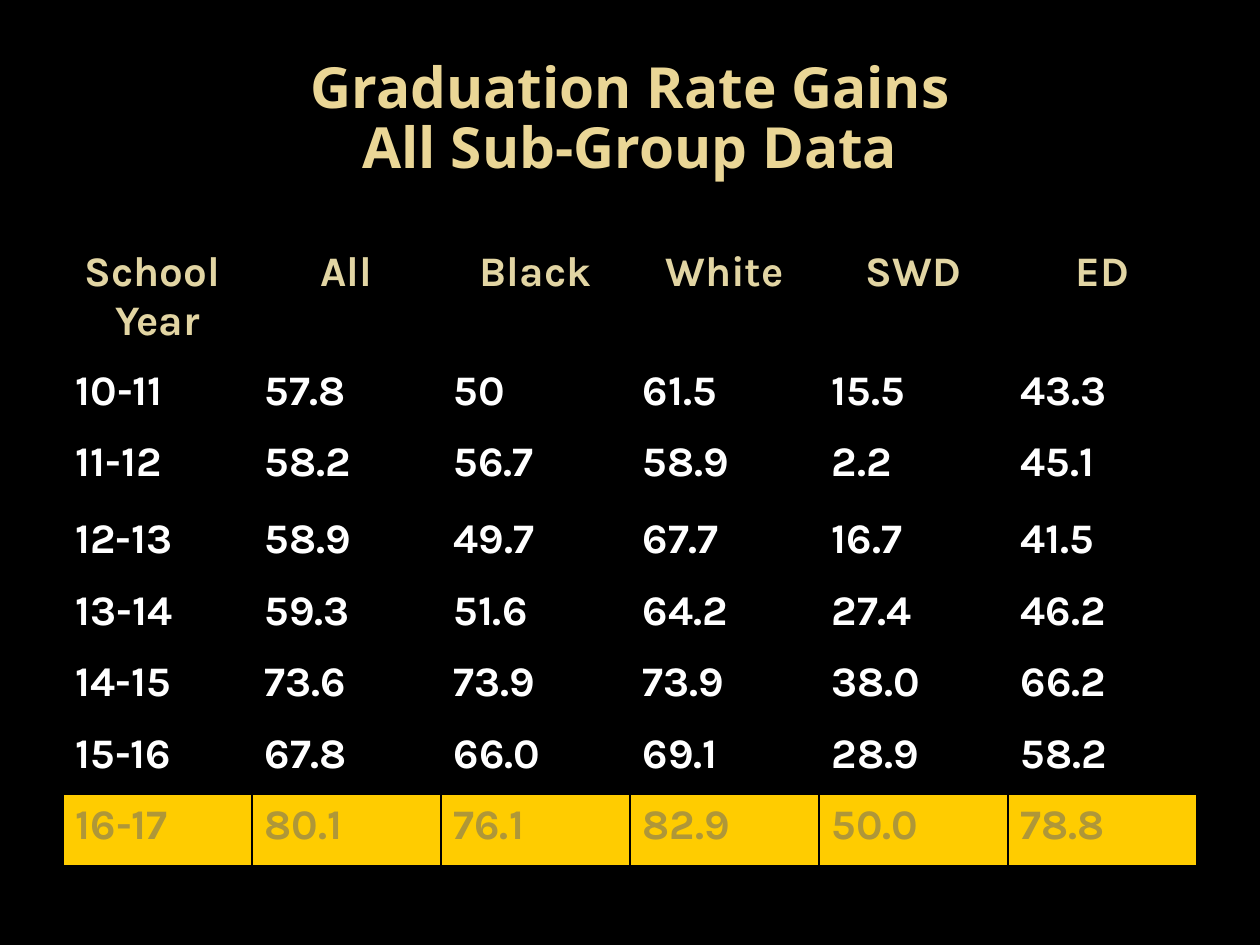
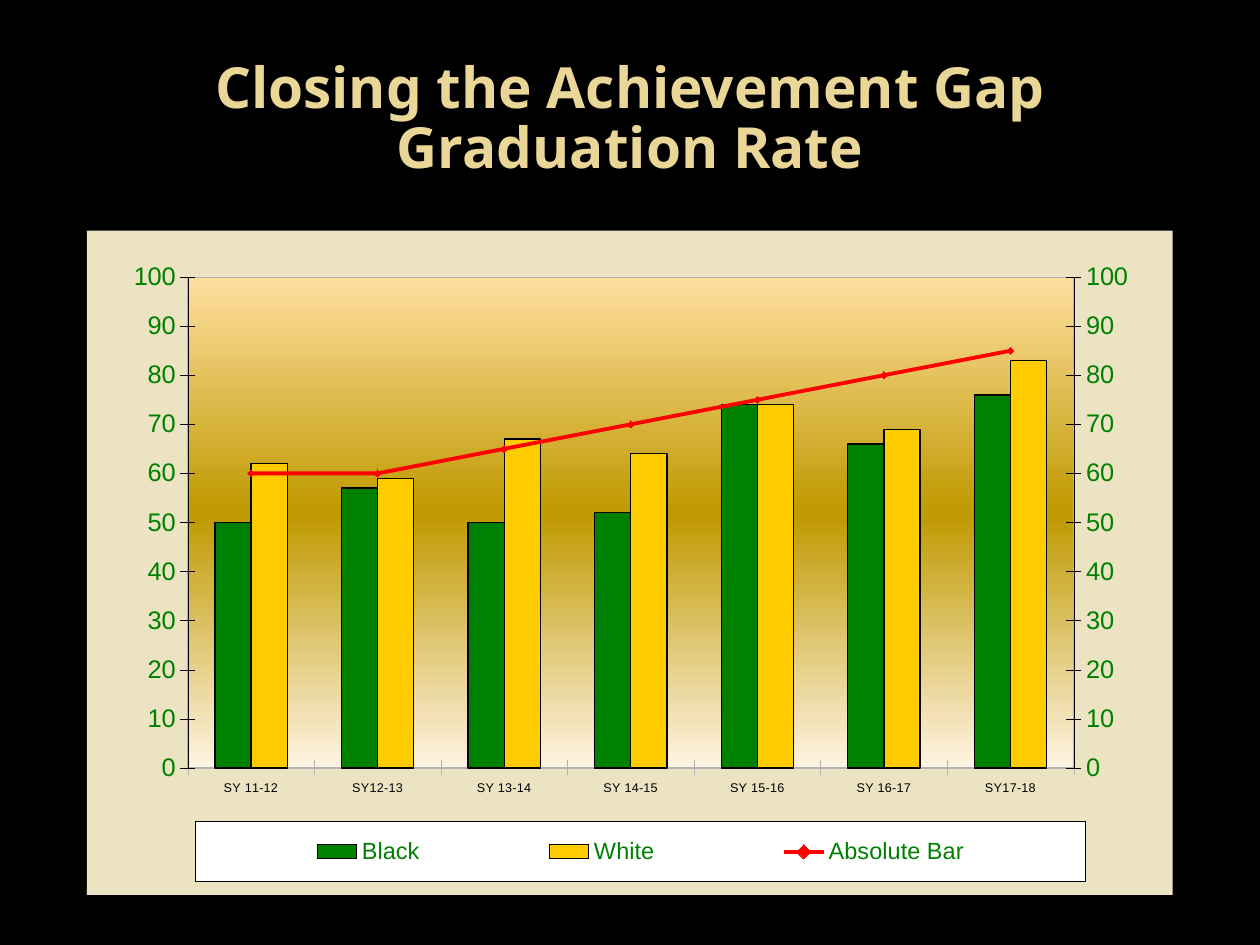
import copy

import pptx
import pptx.chart.data
import pptx.dml.color
import pptx.enum.chart
import pptx.enum.text
import pptx.oxml
import pptx.oxml.ns
import pptx.util

Cm, Pt = pptx.util.Cm, pptx.util.Pt
qn = pptx.oxml.ns.qn
NS = pptx.oxml.ns.nsdecls("c", "a")

INK = {
    "back": "000000", "title": "EAD696", "head": "E2D5A3", "text": "FFFFFF",
    "last": "AF9738", "gold": "FFCC00", "green": "008000", "red": "FF0000",
    "panel": "EBE3C2", "grid": "B3B3B3",
}
GLOW = [(0, "FFDFA0"), (48, "BF9900"), (100, "FFF4E3")]

TITLES = ["Graduation Rate Gains\vAll Sub-Group Data",
          "Closing the Achievement Gap\vGraduation Rate"]
RATES = [
    ["School \nYear", "All", "Black", "White", "SWD", "ED"],
    ["10-11", "57.8", "50", "61.5", "15.5", "43.3"],
    ["11-12", "58.2", "56.7", "58.9", "2.2", "45.1"],
    ["12-13", "58.9", "49.7", "67.7", "16.7", "41.5"],
    ["13-14", "59.3", "51.6", "64.2", "27.4", "46.2"],
    ["14-15", "73.6", "73.9", "73.9", "38.0", "66.2"],
    ["15-16", "67.8", "66.0", "69.1", "28.9", "58.2"],
    ["16-17", "80.1", "76.1", "82.9", "50.0", "78.8"],
]
HEIGHTS = [2.39, 1.44, 1.55] + [1.44] * 5
YEARS = ["SY 11-12", "SY12-13", "SY 13-14", "SY 14-15",
         "SY 15-16", "SY 16-17", "SY17-18"]
BARS = {
    "Black": ([50, 57, 50, 52, 74, 66, 76], "green"),
    "White": ([62, 59, 67, 64, 74, 69, 83], "gold"),
}
GOAL = ("Absolute Bar", [60, 60, 65, 70, 75, 80, 85])
LEFT, WIDTH = 1.27, 22.86


def rgb(name):
    return pptx.dml.color.RGBColor.from_string(INK[name])


def style(font, face, size, color, bold=False):
    font.name, font.size, font.bold = face, Pt(size), bold
    font.color.rgb = rgb(color)


def paint(fill, color):
    fill.solid()
    fill.fore_color.rgb = rgb(color)


def draw(line, color, width):
    line.color.rgb = rgb(color)
    line.width = Pt(width)


def start(deck, text):
    """Add a slide with the shared title."""
    slide = deck.slides.add_slide(deck.slide_layouts[5])
    title = slide.shapes.title
    title.left, title.top = Cm(LEFT), Cm(0.84)
    title.width, title.height = Cm(WIDTH), Cm(3.18)
    frame = title.text_frame
    frame.text = text
    frame.vertical_anchor = pptx.enum.text.MSO_ANCHOR.MIDDLE
    para = frame.paragraphs[0]
    para.alignment = pptx.enum.text.PP_ALIGN.CENTER
    para.line_spacing = 0.88
    for run in para.runs:
        style(run.font, "Noto Sans", 32.4, "title", True)
    return slide


def edge(cell):
    """Put a thin border on all four sides of a cell."""
    props = cell._tc.get_or_add_tcPr()
    for spot, side in enumerate(("lnL", "lnR", "lnT", "lnB")):
        props.insert(spot, pptx.oxml.parse_xml(
            f'<a:{side} {NS} w="12700"><a:solidFill>'
            f'<a:srgbClr val="{INK["back"]}"/></a:solidFill></a:{side}>'))


def fill_table(slide):
    rows, cols = len(RATES), len(RATES[0])
    table = slide.shapes.add_table(
        rows, cols, Cm(LEFT), Cm(4.88), Cm(WIDTH), Cm(sum(HEIGHTS))).table
    table.first_row = table.horz_banding = False
    for col in table.columns:
        col.width = Cm(WIDTH / cols)
    for r, (row, height) in enumerate(zip(RATES, HEIGHTS)):
        table.rows[r].height = Cm(height)
        color = {0: "head", rows - 1: "last"}.get(r, "text")
        for c, text in enumerate(row):
            cell = table.cell(r, c)
            cell.text = text
            if color == "last":
                paint(cell.fill, "gold")
            else:
                cell.fill.background()
            edge(cell)
            for para in cell.text_frame.paragraphs:
                if r == 0:
                    para.alignment = pptx.enum.text.PP_ALIGN.CENTER
                for run in para.runs:
                    style(run.font, "Karla", 24, color, True)


def layout(x, y, w, h, inner=False):
    target = '<c:layoutTarget val="inner"/>' if inner else ""
    parts = "".join(f'<c:{k}Mode val="edge"/>' for k in "xy")
    parts += "".join(f'<c:{k} val="{v}"/>' for k, v in zip("xywh", (x, y, w, h)))
    return pptx.oxml.parse_xml(
        f"<c:layout {NS}><c:manualLayout>{target}{parts}"
        "</c:manualLayout></c:layout>")


def place(parent, new, after=None):
    """Swap in a layout, optionally right behind a given child."""
    old = parent.find(qn("c:layout"))
    if old is not None:
        parent.remove(old)
    if after is None:
        parent.insert(0, new)
    else:
        parent.find(qn(after)).addnext(new)


def shape_props(fill, line):
    return pptx.oxml.parse_xml(
        f"<c:spPr {NS}>{fill}<a:ln>{line}</a:ln></c:spPr>")


def solid(color):
    return f'<a:solidFill><a:srgbClr val="{INK[color]}"/></a:solidFill>'


def add_right(area):
    """Move the last series to a line on a second value axis."""
    bars = area.find(qn("c:barChart"))
    goal = bars.findall(qn("c:ser"))[-1]
    flip = goal.find(qn("c:invertIfNegative"))
    if flip is not None:
        goal.remove(flip)
    line = pptx.oxml.parse_xml(
        f'<c:lineChart {NS}><c:grouping val="standard"/>'
        '<c:varyColors val="0"/><c:marker val="1"/>'
        '<c:axId val="501"/><c:axId val="502"/></c:lineChart>')
    line.insert(2, goal)
    bars.addnext(line)
    first = area.find(qn("c:catAx"))
    last = area.find(qn("c:valAx"))
    for axis, own, other in ((first, "501", "502"), (last, "502", "501")):
        twin = copy.deepcopy(axis)
        twin.find(qn("c:axId")).set("val", own)
        twin.find(qn("c:crossAx")).set("val", other)
        if axis is first:
            twin.find(qn("c:delete")).set("val", "1")
        else:
            twin.find(qn("c:axPos")).set("val", "r")
            twin.find(qn("c:crosses")).set("val", "max")
        area.findall(qn("c:valAx"))[-1].addnext(twin)


def fill_chart(slide):
    enum = pptx.enum.chart
    data = pptx.chart.data.CategoryChartData()
    data.categories = YEARS
    for name, (vals, _) in BARS.items():
        data.add_series(name, vals)
    data.add_series(*GOAL)
    chart = slide.shapes.add_chart(
        enum.XL_CHART_TYPE.COLUMN_CLUSTERED,
        Cm(1.75), Cm(4.65), Cm(21.89), Cm(13.39), data).chart
    chart.has_title = False
    style(chart.font, "Arial", 7.2, "back")

    cross = enum.XL_TICK_MARK.CROSS
    base, scale = chart.category_axis, chart.value_axis
    base.major_tick_mark = scale.major_tick_mark = cross
    draw(base.format.line, "grid", 0.18)
    draw(scale.format.line, "back", 0.18)
    scale.has_major_gridlines = False
    scale.minimum_scale, scale.maximum_scale, scale.major_unit = 0, 100, 10
    style(scale.tick_labels.font, "Arial", 14.5, "green")

    area = chart._chartSpace.chart.plotArea
    add_right(area)
    plot, track = chart.plots
    plot.gap_width, plot.overlap = 150, 0
    plot.vary_by_categories = False
    for series, (_, color) in zip(plot.series, BARS.values()):
        paint(series.format.fill, color)
        draw(series.format.line, "back", 0.73)
    goal = track.series[0]
    goal.smooth = False
    draw(goal.format.line, "red", 2.18)
    goal.marker.style = enum.XL_MARKER_STYLE.DIAMOND
    goal.marker.size = 4
    paint(goal.marker.format.fill, "red")
    draw(goal.marker.format.line, "red", 0.5)

    chart.has_legend = True
    legend = chart.legend
    legend.position = enum.XL_LEGEND_POSITION.RIGHT
    legend.include_in_layout = False
    style(legend.font, "Arial", 13.4, "green")
    key = legend._element
    place(key, layout(0.1, 0.89, 0.82, 0.09), "c:legendPos")
    key.find(qn("c:overlay")).addnext(shape_props(solid("text"), solid("back")))

    place(area, layout(0.093, 0.07, 0.816, 0.739, True))
    stops = "".join(f'<a:gs pos="{at * 1000}"><a:srgbClr val="{tint}"/></a:gs>'
                    for at, tint in GLOW)
    area.append(shape_props(
        f'<a:gradFill><a:gsLst>{stops}</a:gsLst><a:lin ang="5400000"/></a:gradFill>',
        solid("grid")))
    chart._chartSpace.chart.addnext(shape_props(solid("panel"), "<a:noFill/>"))


def main():
    deck = pptx.Presentation()
    deck.slide_width, deck.slide_height = Cm(25.4), Cm(19.05)
    paint(deck.slide_master.background.fill, "back")
    for title, build in zip(TITLES, (fill_table, fill_chart)):
        build(start(deck, title))
    deck.save("out.pptx")


if __name__ == "__main__":
    main()
